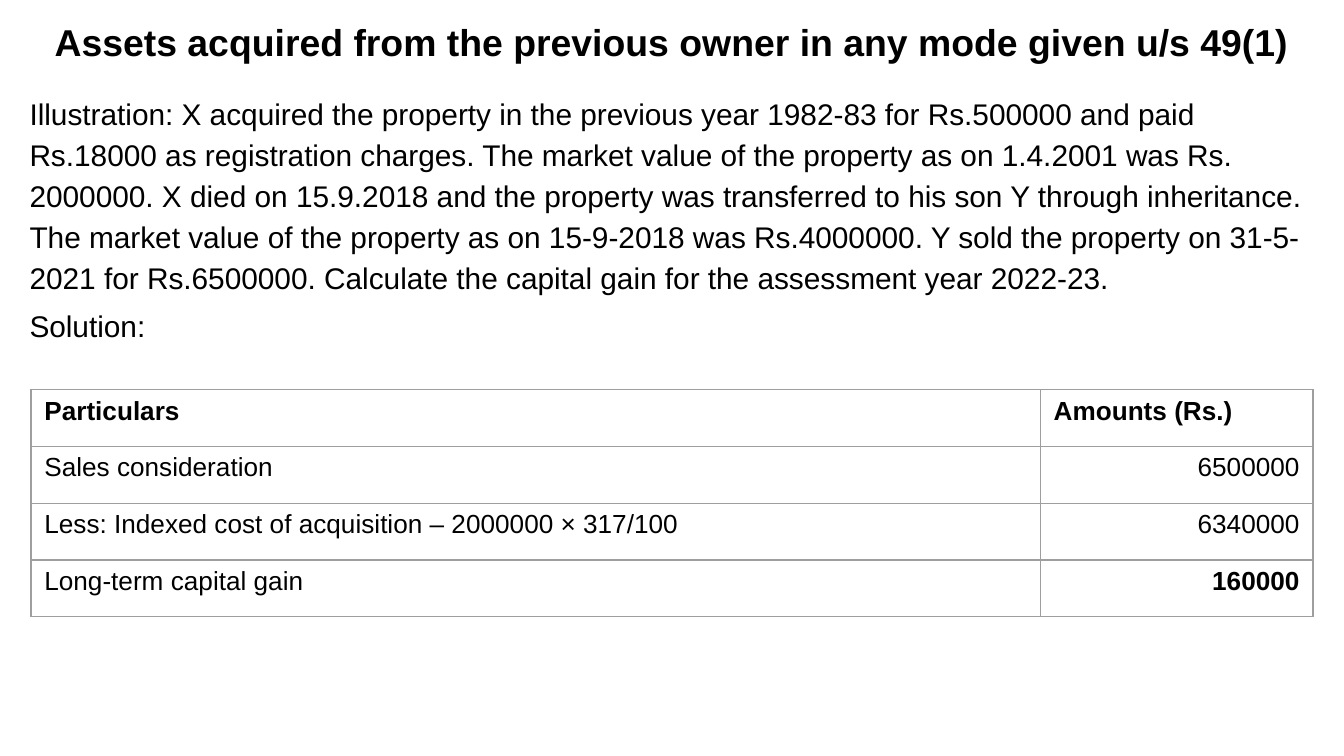
from lxml.etree import SubElement
from pptx import Presentation
from pptx.dml.color import RGBColor
from pptx.enum.text import MSO_ANCHOR, PP_ALIGN
from pptx.oxml.ns import qn
from pptx.util import Inches, Pt

BLACK = RGBColor(0x00, 0x00, 0x00)
WHITE = RGBColor(0xFF, 0xFF, 0xFF)
GREY = RGBColor(0x9E, 0x9E, 0x9E)
FONT = "Arial"

TITLE = "Assets acquired from the previous owner in any mode given u/s 49(1)"
ILLUSTRATION = (
    "Illustration: X acquired the property in the previous year 1982-83 for "
    "Rs.500000 and paid Rs.18000 as registration charges. The market value of "
    "the property as on 1.4.2001 was Rs. 2000000. X died on 15.9.2018 and the "
    "property was transferred to his son Y through inheritance. The market "
    "value of the property as on 15-9-2018 was Rs.4000000. Y sold the property "
    "on 31-5-2021 for Rs.6500000. Calculate the capital gain for the "
    "assessment year 2022-23."
)
GAIN_ROWS = [
    ("Particulars", "Amounts (Rs.)"),
    ("Sales consideration", "6500000"),
    ("Less: Indexed cost of acquisition – 2000000 × 317/100", "6340000"),
    ("Long-term capital gain", "160000"),
]
COLUMN_WIDTHS = (7.51, 2.03)
TABLE_HEIGHT = 1.69


def write_text(frame, *texts, size, bold=False, align=PP_ALIGN.LEFT,
               line_spacing=1.0, space_before=0):
    """Fill a text frame with one paragraph for each text."""
    for index, text in enumerate(texts):
        para = frame.paragraphs[0] if index == 0 else frame.add_paragraph()
        para.alignment = align
        para.line_spacing = line_spacing
        para.space_before = Pt(space_before)
        span = para.add_run()
        span.text = text
        span.font.name = FONT
        span.font.size = Pt(size)
        span.font.bold = bold
        span.font.color.rgb = BLACK


def add_text_box(page, left, top, width, height, *texts,
                 anchor=MSO_ANCHOR.TOP, margin_left=0.1, **text_format):
    box = page.shapes.add_textbox(
        Inches(left), Inches(top), Inches(width), Inches(height))
    frame = box.text_frame
    frame.word_wrap = True
    frame.vertical_anchor = anchor
    frame.margin_left = Inches(margin_left)
    write_text(frame, *texts, **text_format)


def add_borders(cell):
    properties = cell._tc.get_or_add_tcPr()
    for position, side in enumerate(("a:lnL", "a:lnR", "a:lnT", "a:lnB")):
        line = properties.makeelement(qn(side), {"w": str(Pt(0.75))})
        fill = SubElement(line, qn("a:solidFill"))
        SubElement(fill, qn("a:srgbClr"), val=str(GREY))
        properties.insert(position, line)


def add_gain_table(page, left, top):
    table = page.shapes.add_table(
        len(GAIN_ROWS), len(COLUMN_WIDTHS), Inches(left), Inches(top),
        Inches(sum(COLUMN_WIDTHS)), Inches(TABLE_HEIGHT)).table
    for column, width in zip(table.columns, COLUMN_WIDTHS):
        column.width = Inches(width)
    last_row = len(GAIN_ROWS) - 1
    for row, texts in enumerate(GAIN_ROWS):
        for column, text in enumerate(texts):
            cell = table.cell(row, column)
            cell.fill.solid()
            cell.fill.fore_color.rgb = WHITE
            add_borders(cell)
            is_amount = row > 0 and column == 1
            write_text(
                cell.text_frame, text, size=14,
                bold=row == 0 or (is_amount and row == last_row),
                align=PP_ALIGN.RIGHT if is_amount else PP_ALIGN.LEFT)


def main():
    deck = Presentation()
    deck.slide_width = Inches(10)
    deck.slide_height = deck.slide_width * 9 // 16
    page = deck.slides.add_slide(deck.slide_layouts[6])
    add_text_box(page, 0, 0, 10, 0.62, TITLE, size=20, bold=True,
                 align=PP_ALIGN.CENTER, anchor=MSO_ANCHOR.MIDDLE)
    add_text_box(page, 0, 0.62, 10, 5.01, ILLUSTRATION, "Solution:", size=16,
                 margin_left=0.22, line_spacing=1.15, space_before=3.6)
    add_gain_table(page, 0.23, 2.9)
    deck.save("out.pptx")


if __name__ == "__main__":
    main()
